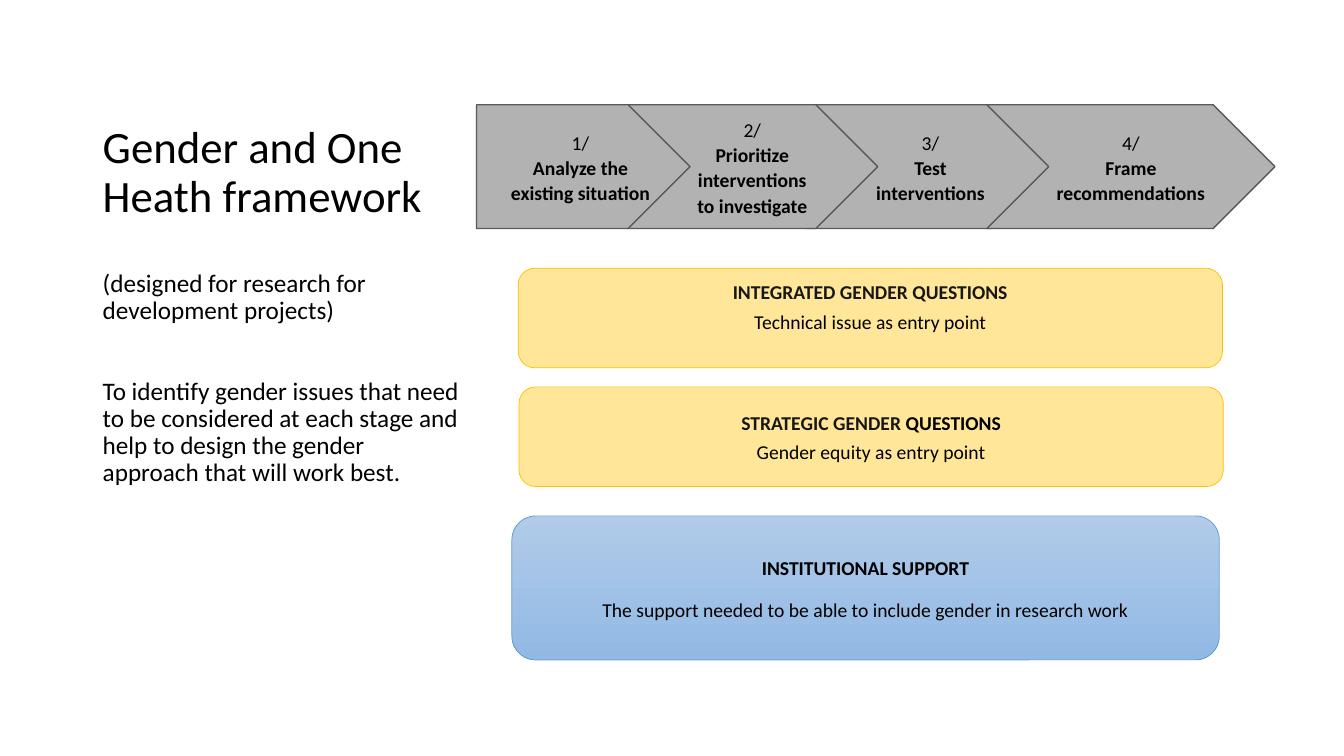
from pptx import Presentation
from pptx.dml.color import RGBColor
from pptx.enum.shapes import MSO_SHAPE
from pptx.enum.text import MSO_ANCHOR, PP_ALIGN
from pptx.util import Cm, Pt

COLORS = {
    "black": "000000", "ink": "171717",
    "gray": "B2B2B2", "edge": "595959",
    "yellow": "FFE699", "gold": "FFC000",
    "light": "B1CBE9", "blue": "92B9E4", "rim": "5B9BD5",
}


def color(name):
    return RGBColor.from_string(COLORS[name])


def style(para, size, spacing, bold=False):
    """Set line spacing, and the font of all runs, in black."""
    para.line_spacing = spacing
    for run in para.runs:
        run.font.name = "Calibri"
        run.font.size = Pt(size)
        run.font.bold = bold
        run.font.color.rgb = color("black")


deck = Presentation()
deck.slide_width, deck.slide_height = Cm(33.87), Cm(19.05)
slide = deck.slides.add_slide(deck.slide_layouts[6])
shapes = slide.shapes

# Title and body on the left
texts = [
    (1.27, 10.92, 4.45, MSO_ANCHOR.BOTTOM, 32,
     ["Gender and One Heath framework"]),
    (6.7, 9.58, 9.6, MSO_ANCHOR.TOP, 18,
     ["(designed for research for development projects)",
      "To identify gender issues that need to be considered at each stage "
      "and help to design the gender approach that will work best."]),
]
for top, width, height, anchor, size, lines in texts:
    frame = shapes.add_textbox(Cm(2.34), Cm(top), Cm(width), Cm(height)).text_frame
    frame.word_wrap = True
    frame.vertical_anchor = anchor
    frame.text = "\n".join(lines)
    for place, para in enumerate(frame.paragraphs):
        style(para, size, 0.9)
        para.space_before = Pt(38 * place)

# Stage arrows, from back to front
stages = [
    (3, 20.35, 6.2, "Test interventions"),
    (2, 15.8, 6.32, "Prioritize interventions to investigate"),
    (1, 12.01, 5.38, "Analyze the existing situation"),
    (4, 24.87, 7.26, "Frame recommendations"),
]
for number, left, width, label in stages:
    first = number == 1
    kind = MSO_SHAPE.PENTAGON if first else MSO_SHAPE.CHEVRON
    arrow = shapes.add_shape(kind, Cm(left), Cm(2.64), Cm(width), Cm(3.12))
    arrow.shadow.inherit = False
    arrow.fill.solid()
    arrow.fill.fore_color.rgb = color("gray")
    arrow.line.color.rgb = color("edge")
    arrow.line.width = Pt(1)
    frame = arrow.text_frame
    frame.word_wrap = True
    frame.vertical_anchor = MSO_ANCHOR.MIDDLE
    frame.margin_left = Cm(0.64 if first else 0)
    frame.margin_right = Cm(0)
    frame.text = f"{number}/\n{label}"
    for place, para in enumerate(frame.paragraphs):
        style(para, 14, 1.07, bold=place == 1)
        para.alignment = PP_ALIGN.CENTER

# Question and support boxes: place, bottom margin, gap, colours, text
boxes = [
    (13.08, 9.75, 17.75, 2.51, 0.13, 3, ["yellow"], "gold",
     [("STRATEGIC GENDER ", "ink"), ("QUESTIONS", "black")],
     "Gender equity as entry point"),
    (12.9, 13, 17.83, 3.63, 0.13, 12, ["light", "blue"], "rim",
     [("INSTITUTIONAL SUPPORT", "black")],
     "The support needed to be able to include gender in research work"),
    (13.06, 6.76, 17.75, 2.51, 0.73, 3, ["yellow"], "gold",
     [("INTEGRATED GENDER QUESTIONS", "ink")],
     "Technical issue as entry point"),
]
for left, top, width, height, bottom, gap, fills, rim, parts, note in boxes:
    box = shapes.add_shape(MSO_SHAPE.ROUNDED_RECTANGLE,
                           Cm(left), Cm(top), Cm(width), Cm(height))
    box.shadow.inherit = False
    if len(fills) == 1:
        box.fill.solid()
        box.fill.fore_color.rgb = color(fills[0])
    else:
        box.fill.gradient()
        box.fill.gradient_angle = 270
        for stop, name in zip(box.fill.gradient_stops, fills):
            stop.color.rgb = color(name)
    box.line.color.rgb = color(rim)
    box.line.width = Pt(0.5)
    frame = box.text_frame
    frame.word_wrap = True
    frame.vertical_anchor = MSO_ANCHOR.MIDDLE
    frame.margin_bottom = Cm(bottom)
    head, foot = frame.paragraphs[0], frame.add_paragraph()
    for text, name in parts:
        head.add_run().text = text
    foot.text = note
    for para in (head, foot):
        style(para, 14, 1.07, bold=para is head)
        para.alignment = PP_ALIGN.CENTER
    head.space_after = Pt(gap)
    for run, (text, name) in zip(head.runs, parts):
        run.font.color.rgb = color(name)

deck.save("out.pptx")
